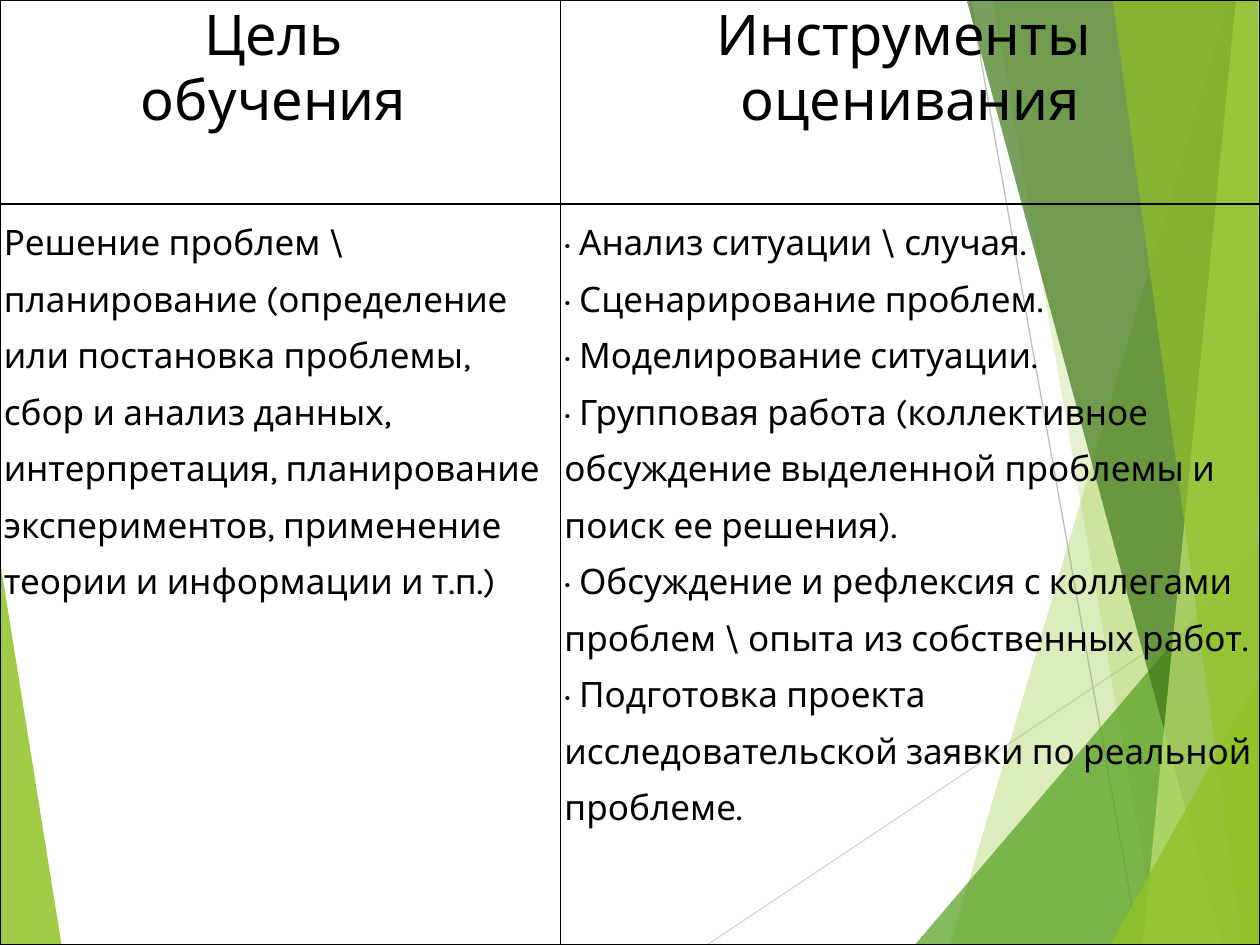
import lxml.etree
import pptx
import pptx.dml.color
import pptx.enum.shapes
import pptx.enum.text
import pptx.oxml
import pptx.oxml.ns
import pptx.util

FONT = "Karla"
GREEN = "90C226"
BLACK = "000000"

FACETS_LEFT = [
    (GREEN, 85, [(-0.1, 58.5), (4.9, 100.1), (-0.1, 100)]),
]
RAYS = [
    ("D9D9D9", (56.1, 100), (100.1, 60.9)),
    ("BFBFBF", (77, 0), (90.4, 100)),
]
FACETS_RIGHT = [
    (GREEN, 30, [(97.5, 0), (75.4, 100), (100.2, 100.1), (100.1, 0.1)]),
    (GREEN, 20, [(78.8, -0.1), (91.9, 100), (100.1, 100), (100.1, -0.1)]),
    ("54A021", 72, [(72.6, 100), (100, 57.2), (100.1, 100)]),
    ("3F7819", 70, [(76.7, -0.1), (97, 100), (100.1, 99.9), (100.1, -0.1)]),
    ("C0E474", 70, [(98.1, -0.1), (90.7, 100), (100.1, 100), (100, -0.1)]),
    (GREEN, 65, [(88.3, -0.1), (98.6, 100), (100, 100), (99.8, -0.1)]),
    (GREEN, 80, [(88.1, 100), (100.1, 71.3), (100.1, 99.9)]),
]

HEADINGS = [["Цель ", "обучения "], ["Инструменты ", "оценивания"]]
GOAL = [
    "Решение проблем \\ планирование (определение или постановка проблемы, "
    "сбор и анализ данных, интерпретация, планирование экспериментов, "
    "применение теории и информации и т.п.)"
]
TOOLS = [
    "· Анализ ситуации \\ случая.",
    "· Сценарирование проблем.",
    "· Моделирование ситуации.",
    "· Групповая работа (коллективное обсуждение выделенной проблемы и поиск ее решения).",
    "· Обсуждение и рефлексия с коллегами проблем \\ опыта из собственных работ.",
    "· Подготовка проекта исследовательской заявки по реальной проблеме.",
]
COLUMN_SHARES = [0.445, 0.555]
ROW_SHARES = [0.216, 0.784]


def color(value):
    return pptx.dml.color.RGBColor.from_string(value)


def add_child(parent, tag, **attributes):
    child = lxml.etree.SubElement(parent, pptx.oxml.ns.qn(tag))
    for key, value in attributes.items():
        child.set(key, str(value))
    return child


def place(box, point):
    left, top, width, height = box
    return round(left + width * point[0] / 100), round(top + height * point[1] / 100)


def add_facets(slide, box, facets):
    for fill, opacity, corners in facets:
        points = [place(box, corner) for corner in corners]
        outline = slide.shapes.build_freeform(*points[0], scale=1.0)
        outline.add_line_segments(points[1:], close=True)
        facet = outline.convert_to_shape()
        facet.shadow.inherit = False
        facet.line.fill.background()
        facet.fill.solid()
        facet.fill.fore_color.rgb = color(fill)
        tint = facet.fill._xPr.find(".//" + pptx.oxml.ns.qn("a:srgbClr"))
        add_child(tint, "a:alpha", val=opacity * 1000)


def add_rays(slide, box):
    for stroke, start, end in RAYS:
        ray = slide.shapes.add_connector(
            pptx.enum.shapes.MSO_CONNECTOR.STRAIGHT, *place(box, start), *place(box, end)
        )
        ray.line.color.rgb = color(stroke)
        ray.line.width = pptx.util.Pt(0.75)
        add_child(ray._element.spPr, "a:effectLst")


def add_backdrop(slide, box):
    add_facets(slide, box, FACETS_LEFT)
    add_rays(slide, box)
    add_facets(slide, box, FACETS_RIGHT)


def frame_cell(cell):
    properties = cell._tc.get_or_add_tcPr()
    for side in ("a:lnL", "a:lnR", "a:lnT", "a:lnB"):
        border = add_child(properties, side, w=pptx.util.Pt(1))
        add_child(add_child(border, "a:solidFill"), "a:srgbClr", val=BLACK)
    cell.fill.background()


def fill_cell(cell, lines, size, alignment, spacing):
    frame_cell(cell)
    margin = pptx.util.Inches(0.03)
    cell.margin_left = cell.margin_right = margin
    cell.margin_top = cell.margin_bottom = margin
    for index, line in enumerate(lines):
        frame = cell.text_frame
        paragraph = frame.add_paragraph() if index else frame.paragraphs[0]
        paragraph.alignment = alignment
        paragraph.line_spacing = spacing
        run = paragraph.add_run()
        run.text = line
        run.font.name = FONT
        run.font.size = pptx.util.Pt(size)
        run.font.bold = False
        run.font.color.rgb = color(BLACK)


def add_assessment_table(slide, box):
    assessment = slide.shapes.add_table(2, 2, *box).table
    assessment.first_row = False
    assessment.horz_banding = False
    for column, share in zip(assessment.columns, COLUMN_SHARES):
        column.width = round(box[2] * share)
    for row, share in zip(assessment.rows, ROW_SHARES):
        row.height = round(box[3] * share)
    align = pptx.enum.text.PP_ALIGN
    for index, (heading, body) in enumerate(zip(HEADINGS, [GOAL, TOOLS])):
        fill_cell(assessment.cell(0, index), heading, 32, align.CENTER, 1.0)
        fill_cell(assessment.cell(1, index), body, 20, align.LEFT, 1.38)


def main():
    deck = pptx.Presentation()
    deck.slide_width = pptx.util.Inches(10)
    deck.slide_height = pptx.util.Inches(7.5)
    slide = deck.slides.add_slide(deck.slide_layouts[6])
    page = (0, 0, deck.slide_width, deck.slide_height)
    add_backdrop(slide, page)
    add_assessment_table(slide, page)
    deck.save("out.pptx")


if __name__ == "__main__":
    main()
